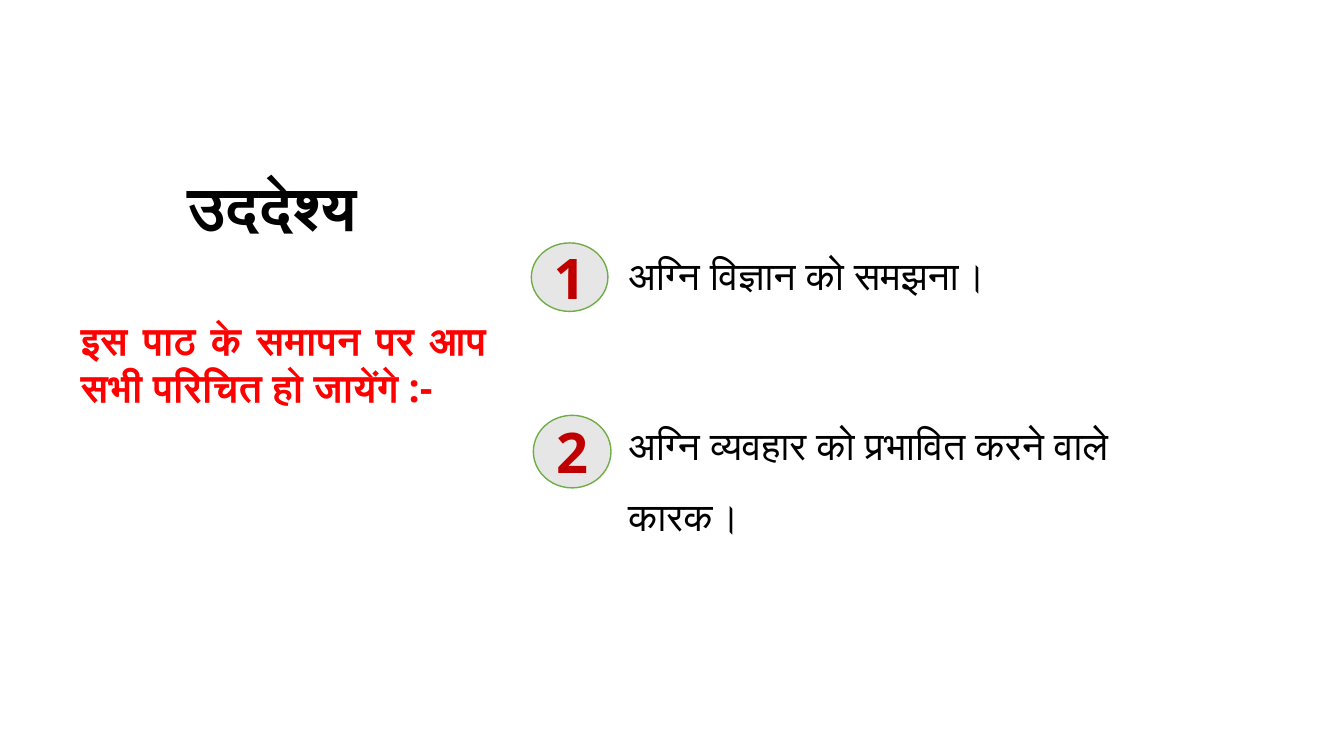
"""Build the Hindi lesson objectives slide with two numbered goals."""
from dataclasses import dataclass

from lxml.etree import SubElement
from pptx import Presentation
from pptx.dml.color import RGBColor
from pptx.enum.shapes import MSO_SHAPE as Preset
from pptx.enum.text import MSO_ANCHOR as Anchor, MSO_AUTO_SIZE as AutoSize, PP_ALIGN as Align
from pptx.oxml.ns import qn
from pptx.util import Inches, Pt

FONT = "Open Sans"
COLORS = {
    "text": "000000",
    "intro": "FF0000",
    "number": "C00000",
    "badge": "E7E6E6",
    "outline": "70AD47",
}


@dataclass(frozen=True)
class Box:
    left: float
    top: float
    width: float
    height: float

    def lengths(self) -> tuple:
        return tuple(Inches(v) for v in (self.left, self.top, self.width, self.height))


@dataclass(frozen=True)
class Goal:
    number: str
    wording: str
    badge: Box
    space_before: float


GOALS = [
    Goal("1", "अग्नि विज्ञान को समझना।", Box(5.27, 2.41, 0.76, 0.68), 0),
    Goal("2", "अग्नि व्यवहार को प्रभावित करने वाले कारक।", Box(5.29, 4.12, 0.77, 0.72), 71),
]


def rgb(role: str) -> RGBColor:
    return RGBColor.from_string(COLORS[role])


def place(shape, box: Box) -> None:
    shape.left, shape.top, shape.width, shape.height = box.lengths()


def prepare(shape, anchor: Anchor):
    frame = shape.text_frame
    frame.word_wrap = True
    frame.auto_size = AutoSize.NONE
    frame.vertical_anchor = anchor
    return frame


def write(paragraph, wording: str, size: float, role: str, bold: bool,
          align: Align, line_spacing: float = 1.0, space_before: float = 0) -> None:
    paragraph.alignment = align
    paragraph.line_spacing = line_spacing
    paragraph.space_before = Pt(space_before)
    run = paragraph.add_run()
    run.text = wording
    run.font.size = Pt(size)
    run.font.bold = bold
    run.font.color.rgb = rgb(role)
    run.font.name = FONT
    SubElement(run.font._element, qn("a:cs"), typeface=FONT)


def add_goals(body) -> None:
    place(body, Box(6.13, 2.21, 6.14, 6.01))
    frame = prepare(body, Anchor.TOP)
    for index, goal in enumerate(GOALS):
        paragraph = frame.add_paragraph() if index else frame.paragraphs[0]
        properties = paragraph._p.get_or_add_pPr()
        properties.set("marL", "0")
        properties.set("indent", "0")
        SubElement(properties, qn("a:buNone"))
        write(paragraph, goal.wording, 28, "text", False, Align.LEFT, 1.5, goal.space_before)


def add_badge(slide, goal: Goal) -> None:
    badge = slide.shapes.add_shape(Preset.OVAL, *goal.badge.lengths())
    badge.shadow.inherit = False
    badge.fill.solid()
    badge.fill.fore_color.rgb = rgb("badge")
    badge.line.color.rgb = rgb("outline")
    badge.line.width = Pt(1)
    frame = prepare(badge, Anchor.MIDDLE)
    write(frame.paragraphs[0], goal.number, 40, "number", True, Align.CENTER)


def main() -> None:
    deck = Presentation()
    deck.slide_width, deck.slide_height = Inches(13.33), Inches(7.5)
    slide = deck.slides.add_slide(deck.slide_layouts[1])

    title = slide.shapes.title
    place(title, Box(0.26, 1.61, 4.88, 0.95))
    heading = prepare(title, Anchor.MIDDLE).paragraphs[0]
    write(heading, "उददेश्य", 44, "text", True, Align.CENTER, 0.9)

    add_goals(slide.placeholders[1])

    intro = slide.shapes.add_textbox(*Box(0.7, 3.09, 4.22, 1.51).lengths())
    lead = prepare(intro, Anchor.TOP).paragraphs[0]
    write(lead, "इस पाठ के समापन पर आप सभी परिचित हो जायेंगे :-", 28, "intro", True, Align.JUSTIFY)

    for goal in GOALS:
        add_badge(slide, goal)

    deck.save("out.pptx")


if __name__ == "__main__":
    main()
